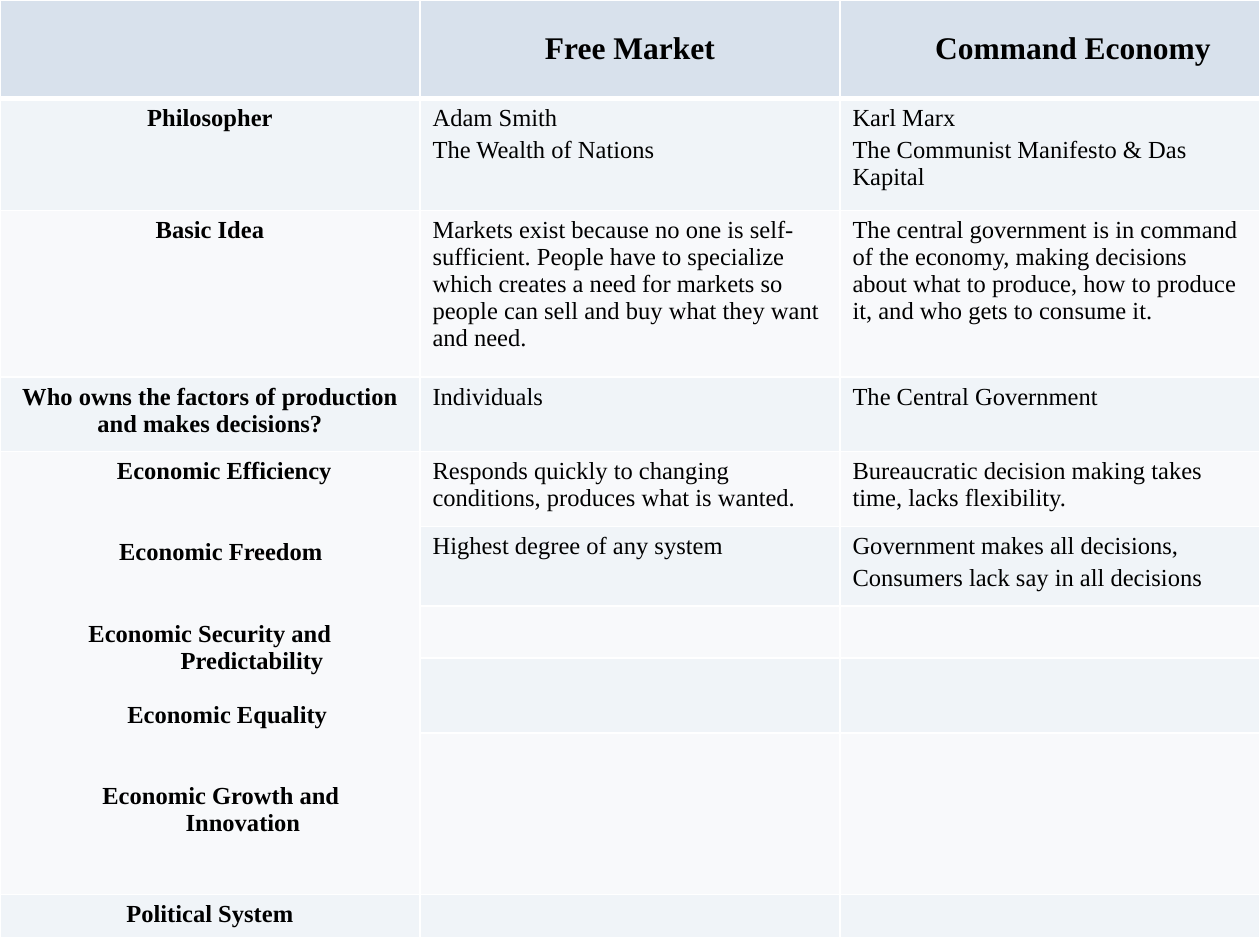
from dataclasses import dataclass

from lxml.etree import SubElement
from pptx import Presentation
from pptx.dml.color import RGBColor
from pptx.enum.text import MSO_ANCHOR, PP_ALIGN
from pptx.oxml.ns import qn
from pptx.util import Cm, Pt


@dataclass
class Line:
    """One paragraph with its left indent in cm and space before in points."""
    text: str
    indent: float = 0
    gap: float = 0


FACE = "Times New Roman"
HEADER_FILL = "D8E1EC"
BAND_FILLS = ("F8F9FB", "F0F4F8")
BORDER = "FFFFFF"
INK = "000000"
HEADING = {"name": FACE, "size": Pt(18), "bold": True}
LABEL = {"name": FACE, "size": Pt(14), "bold": True}
ANSWER = {"name": FACE, "size": Pt(14), "bold": False}
SECOND = 2.8
TOPIC_GAP = 31

ROW_HEIGHTS = (1.98, 2.26, 3.36, 1.5, 1.51, 1.61, 1.05, 1.51, 3.25, 0.87)
TOPICS_FIRST, TOPICS_LAST = 4, 8
TOPICS = [
    Line("Economic Efficiency", 0.58),
    Line("Economic Freedom", 0.44, TOPIC_GAP),
    Line("Economic Security and", 0, TOPIC_GAP),
    Line("Predictability", 1.7),
    Line("Economic Equality", 0.7, TOPIC_GAP / 2),
    Line("Economic Growth and", 0.44, TOPIC_GAP),
    Line("Innovation", 1.33),
]
COMPARISON = [
    [[], [Line("Free Market")], [Line("Command Economy", 0.93)]],
    [[Line("Philosopher")],
     [Line("Adam Smith"), Line("The Wealth of Nations", gap=SECOND)],
     [Line("Karl Marx"),
      Line("The Communist Manifesto & Das Kapital", gap=SECOND)]],
    [[Line("Basic Idea")],
     [Line("Markets exist because no one is self-sufficient. People have to "
           "specialize which creates a need for markets so people can sell "
           "and buy what they want and need.")],
     [Line("The central government is in command of the economy, making "
           "decisions about what to produce, how to produce it, and who gets "
           "to consume it.")]],
    [[Line("Who owns the factors of production and makes decisions?")],
     [Line("Individuals")], [Line("The Central Government")]],
    [TOPICS,
     [Line("Responds quickly to changing conditions, produces what is wanted.")],
     [Line("Bureaucratic decision making takes time, lacks flexibility.")]],
    [[], [Line("Highest degree of any system")],
     [Line("Government makes all decisions,"),
      Line("Consumers lack say in all decisions", gap=SECOND)]],
    [[], [], []],
    [[], [], []],
    [[], [], []],
    [[Line("Political System")], [], []],
]


def paint(color_format, hex_color):
    """Set a colour from a hex string."""
    color_format.rgb = RGBColor.from_string(hex_color)


def apply_format(target, values):
    """Set every attribute named in a dict of format values."""
    for attribute, value in values.items():
        setattr(target, attribute, value)


def add_borders(cell, widths):
    """Draw the cell's edges with widths in points, keyed by side."""
    properties = cell._tc.get_or_add_tcPr()
    for side, width in widths.items():
        edge = SubElement(properties, qn(f"a:ln{side}"), w=str(Pt(width)))
        solid = SubElement(edge, qn("a:solidFill"))
        SubElement(solid, qn("a:srgbClr"), val=BORDER)


def write_lines(cell, lines, font_format, alignment):
    """Write the paragraphs of one cell."""
    frame = cell.text_frame
    for position, line in enumerate(lines):
        paragraph = frame.add_paragraph() if position else frame.paragraphs[0]
        paragraph.alignment = alignment
        if line.gap:
            paragraph.space_before = Pt(line.gap)
        if line.indent:
            paragraph._p.get_or_add_pPr().set("marL", str(Cm(line.indent)))
        run = paragraph.add_run()
        run.text = line.text
        apply_format(run.font, font_format)
        paint(run.font.color, INK)
    if not lines:
        SubElement(frame.paragraphs[0]._p, qn("a:endParaRPr"), sz="1400")


def style_cell(cell, row):
    """Give a cell its edges, fill and anchor for its row."""
    add_borders(cell, {"L": 1, "R": 1, "T": 3 if row == 1 else 1,
                       "B": 1 if row else 3})
    cell.fill.solid()
    paint(cell.fill.fore_color, BAND_FILLS[row % 2] if row else HEADER_FILL)
    cell.vertical_anchor = MSO_ANCHOR.TOP if row else MSO_ANCHOR.MIDDLE


def add_comparison(slide, width):
    """Add the table comparing the two economic systems."""
    columns = len(COMPARISON[0])
    table = slide.shapes.add_table(
        len(COMPARISON), columns, Cm(0), Cm(0),
        Cm(width), Cm(sum(ROW_HEIGHTS))).table
    for column in table.columns:
        column.width = Cm(width / columns)
    for table_row, height in zip(table.rows, ROW_HEIGHTS):
        table_row.height = Cm(height)
    for row, contents in enumerate(COMPARISON):
        for column, lines in enumerate(contents):
            cell = table.cell(row, column)
            style_cell(cell, row)
            centred = row == 0 or column == 0
            font_format = HEADING if row == 0 else ANSWER if column else LABEL
            write_lines(cell, lines, font_format,
                        PP_ALIGN.CENTER if centred else PP_ALIGN.LEFT)
    table.cell(TOPICS_FIRST, 0).merge(table.cell(TOPICS_LAST, 0))


def main():
    """Build the slide and save it."""
    width, height = 25.4, 19.05
    deck = Presentation()
    apply_format(deck, {"slide_width": Cm(width), "slide_height": Cm(height)})
    slide = deck.slides.add_slide(deck.slide_layouts[6])
    add_comparison(slide, width)
    deck.save("out.pptx")


if __name__ == "__main__":
    main()
